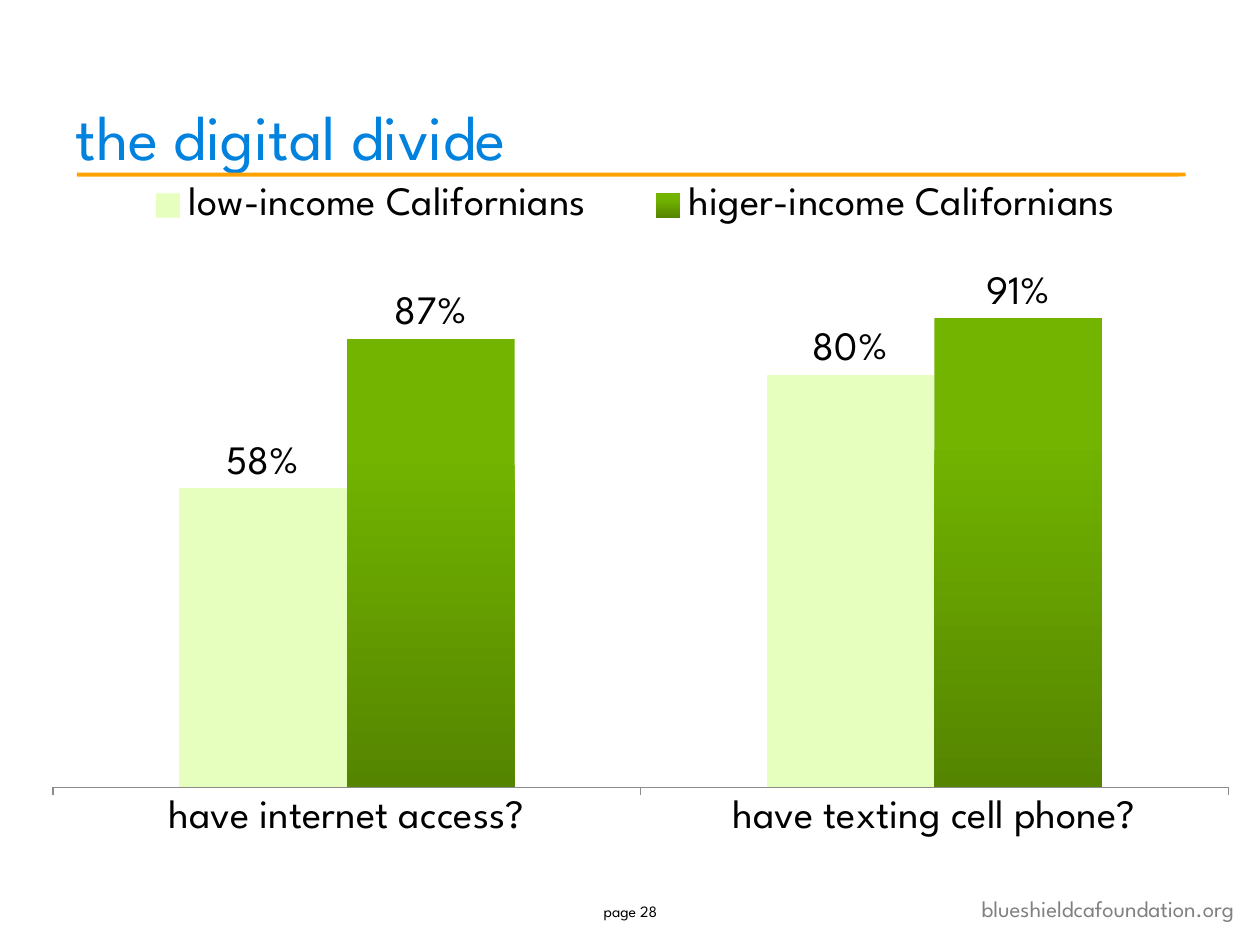
from lxml.etree import SubElement
from pptx import Presentation
from pptx.chart.data import CategoryChartData
from pptx.dml.color import RGBColor
from pptx.enum.chart import (XL_CHART_TYPE, XL_LABEL_POSITION,
                             XL_LEGEND_POSITION, XL_TICK_LABEL_POSITION,
                             XL_TICK_MARK)
from pptx.enum.shapes import MSO_SHAPE
from pptx.enum.text import MSO_ANCHOR, MSO_AUTO_SIZE, PP_ALIGN
from pptx.oxml.ns import qn
from pptx.util import Cm, Pt

HUES = {"blue": "0082DE", "gold": "FFA100", "gray": "7E8082", "black": "000000",
        "axis": "8C8C8C", "pale": "E7FFBE", "green": "72B400", "dark": "558500"}
FACE = "League Spartan"


def hue(name):
    return RGBColor.from_string(HUES[name])


def apply(item, **style):
    for name, value in style.items():
        setattr(item, name, value)


def style(font, size, color="black"):
    apply(font, name=FACE, size=Pt(size), bold=False)
    font.color.rgb = hue(color)


def place(item, *box):
    names = ("left", "top", "width", "height")
    apply(item, **{name: Cm(value) for name, value in zip(names, box)})


def layout(parent, after, inner=False, **box):
    """Give a chart part a manual layout in fractions of the chart."""
    for old in parent.findall(qn("c:layout")):
        parent.remove(old)
    node = SubElement(parent, qn("c:layout"))
    manual = SubElement(node, qn("c:manualLayout"))
    rows = [("layoutTarget", "inner")] if inner else []
    rows += [("xMode", "edge"), ("yMode", "edge"), *box.items()]
    for tag, value in rows:
        SubElement(manual, qn("c:" + tag)).set("val", str(value))
    if after is None:
        parent.insert(0, node)
    else:
        after.addnext(node)


class Deck:
    def __init__(self):
        self.show = Presentation()
        apply(self.show, slide_width=Cm(25.4), slide_height=Cm(19.05))
        self.slide = self.show.slides.add_slide(self.show.slide_layouts[5])

    def title(self, text, *box):
        shape = self.slide.shapes.title
        place(shape, *box)
        frame = shape.text_frame
        frame.text = text
        apply(frame, vertical_anchor=MSO_ANCHOR.BOTTOM, word_wrap=True,
              auto_size=MSO_AUTO_SIZE.NONE)
        line = frame.paragraphs[0]
        apply(line, alignment=PP_ALIGN.LEFT, line_spacing=Pt(42))
        style(line.runs[0].font, 36, "blue")

    def rule(self, *box):
        shape = self.slide.shapes.add_shape(MSO_SHAPE.ROUNDED_RECTANGLE,
                                            *map(Cm, box))
        shape.shadow.inherit = False
        shape.fill.solid()
        shape.fill.fore_color.rgb = hue("gold")
        shape.line.fill.background()

    def text(self, words, size, color, align, anchor, *box):
        frame = self.slide.shapes.add_textbox(*map(Cm, box)).text_frame
        apply(frame, word_wrap=True, vertical_anchor=anchor)
        line = frame.paragraphs[0]
        line.text = words
        line.alignment = align
        style(line.runs[0].font, size, color)

    def chart(self, cats, rows, *box):
        data = CategoryChartData(number_format="0%")
        data.categories = cats
        for name, values in rows.items():
            data.add_series(name, values)
        chart = self.slide.shapes.add_chart(
            XL_CHART_TYPE.COLUMN_CLUSTERED, *map(Cm, box), data).chart
        apply(chart, has_title=False, has_legend=True)
        style(chart.font, 18)

        # Axes
        apply(chart.value_axis, visible=False, minimum_scale=0, maximum_scale=1,
              has_major_gridlines=False)
        axis = chart.category_axis
        apply(axis, major_tick_mark=XL_TICK_MARK.OUTSIDE,
              tick_label_position=XL_TICK_LABEL_POSITION.LOW)
        axis.format.line.color.rgb = hue("axis")
        style(axis.tick_labels.font, 23)

        # Legend and plot area
        key = chart.legend
        apply(key, position=XL_LEGEND_POSITION.RIGHT, include_in_layout=False)
        style(key.font, 23)
        side = key._element.find(qn("c:legendPos"))
        layout(key._element, side, x=0.08, y=0.01, w=0.85, h=0.08)
        area = chart._chartSpace.chart.plotArea
        layout(area, None, inner=True, x=0.042, y=0.138, w=0.933, h=0.682)

        # Columns and their labels
        plot = chart.plots[0]
        apply(plot, gap_width=150, overlap=0, vary_by_categories=False)
        low, high = plot.series
        low.format.fill.solid()
        low.format.fill.fore_color.rgb = hue("pale")
        fill = high.format.fill
        fill.gradient()
        fill.gradient_angle = 270
        for stop, spot, color in zip(fill.gradient_stops, (0.25, 1),
                                     ("green", "dark")):
            stop.position = spot
            stop.color.rgb = hue(color)
        for row in (low, high):
            row.invert_if_negative = False
            tags = row.data_labels
            apply(tags, show_value=True, number_format="0%",
                  number_format_is_linked=False,
                  position=XL_LABEL_POSITION.OUTSIDE_END)
            style(tags.font, 23)


def main():
    deck = Deck()
    # Heading
    deck.rule(1.55, 3.48, 22.35, 0.08)
    deck.title("the digital divide", 1.27, 0.64, 22.86, 2.97)
    # Footer
    deck.text("blueshieldcafoundation.org", 13, "gray", PP_ALIGN.RIGHT,
              MSO_ANCHOR.TOP, 18.29, 17.91, 6.83, 0.81)
    deck.text("page 28", 9, "black", PP_ALIGN.CENTER,
              MSO_ANCHOR.MIDDLE, 11.58, 17.7, 2.26, 1.32)
    # Access by income
    deck.chart(("have internet access?", "have texting cell phone?"),
               {"low-income Californians": (0.58, 0.8),
                "higer-income Californians": (0.87, 0.91)},
               0, 3.38, 25.4, 15.24)
    deck.show.save("out.pptx")


if __name__ == "__main__":
    main()
